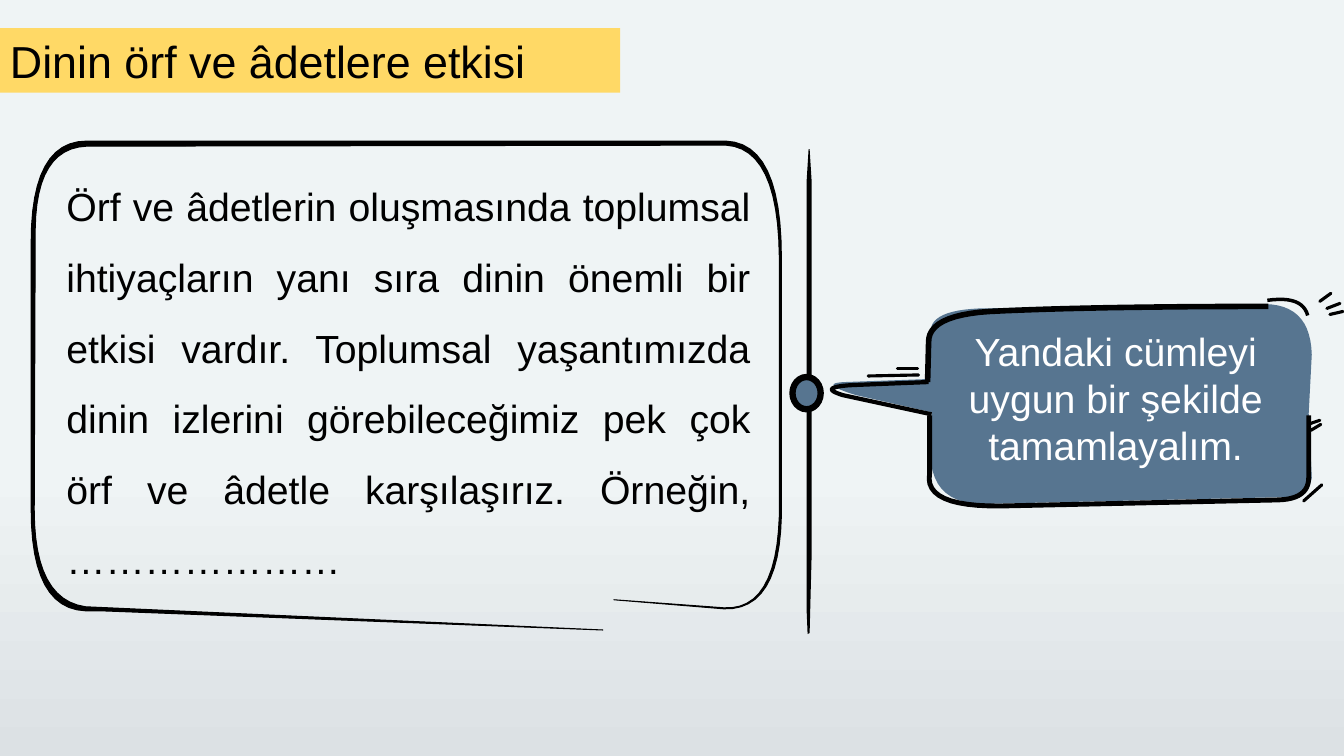
from lxml import etree
from pptx import Presentation
from pptx import util as u
from pptx.dml.color import RGBColor
from pptx.enum import shapes, text
from pptx.oxml import ns

THEME = {
    "font": "Arial", "title_size": 32, "body_size": 28,
    "ink": "000000", "paper": "FFFFFF", "banner": "FFD966", "bubble": "577590",
    "sky": ((0.62, "EFF4F5"), (1, "DCE1E4")),
}

TITLE = "Dinin örf ve âdetlere etkisi"
PASSAGE = (
    "Örf ve âdetlerin oluşmasında toplumsal ihtiyaçların yanı sıra dinin önemli bir "
    "etkisi vardır. Toplumsal yaşantımızda dinin izlerini görebileceğimiz pek çok "
    "örf ve âdetle karşılaşırız. Örneğin, …………………"
)
PROMPT = "Yandaki cümleyi uygun bir şekilde tamamlayalım."

# Each outline: a start point, then line ends (x, y) or curves (bend x, bend y, x, y).
FRAME = [
    (0.86, 1.4), (0.31, 1.4, 0.31, 2.4), (0.31, 5.06), (0.31, 6.04, 0.85, 6.06),
    (1.01, 6.06), (5.98, 6.25), (0.85, 6.02), (0.34, 5.95, 0.34, 5.06),
    (0.35, 2.27), (0.36, 1.47, 0.86, 1.45), (7.2, 1.44), (7.72, 1.47, 7.73, 2.55),
    (7.73, 5.12), (7.7, 6.06, 7.18, 6.03), (6.09, 5.95), (7.18, 6.04),
    (7.73, 6.06, 7.75, 5.12), (7.75, 2.55), (7.75, 1.42, 7.2, 1.4),
]
DIVIDER = [(8, 6.05), (8, 1.8), (8.02, 1.48), (8.03, 1.48), (8.05, 1.8),
           (8.05, 5.5), (8.03, 6.28), (8.01, 6.29)]
BUBBLE = [
    (13.01, 3.52), (12.98, 4.1), (13.01, 4.74), (12.98, 4.92, 12.8, 4.93),
    (9.72, 5), (9.2, 4.98, 9.23, 4.43), (9.24, 4.09), (8.49, 3.92),
    (8.1, 3.8, 8.39, 3.79), (9.22, 3.76), (9.23, 3.28), (9.24, 3.08, 9.71, 3.06),
    (12.61, 3.02), (13, 3.06, 13.01, 3.52),
]
BUBBLE_STROKES = [
    (3.5, [(12.98, 4.12), (12.98, 4.74), (12.98, 4.95, 12.68, 4.96), (9.93, 5.02),
           (9.16, 5.03, 9.22, 4.7), (9.22, 4.12)]),
    (3, [(9.24, 4.11), (8.36, 3.92), (8.1, 3.84, 8.46, 3.82), (9.21, 3.79)]),
    (4, [(9.2, 3.79), (9.21, 3.4), (9.2, 3.13, 9.81, 3.09), (10.8, 3.04, 12.58, 3.04)]),
    (2.5, [(12.57, 2.98), (12.92, 2.93, 12.97, 3.13)]),
]
TICKS = [
    (13.19, 3.12, 13.32, 3.09), (13.16, 3.06, 13.29, 3.01), (13.09, 2.99, 13.2, 2.91),
    (13, 4.27, 13.1, 4.21), (13, 4.2, 13.09, 4.17), (12.93, 4.97, 13.11, 4.81),
    (8.61, 3.73, 9.11, 3.72), (8.9, 3.66, 9.1, 3.66),
]
TICK_WIDTH = 2.25
CURVE_STEPS = 12


def color(name):
    return RGBColor.from_string(THEME.get(name, name))


def trace(outline):
    points = [outline[0]]
    for step in outline[1:]:
        if len(step) == 2:
            points.append(step)
            continue
        start, bend, end = points[-1], step[:2], step[2:]
        for i in range(1, CURVE_STEPS + 1):
            t = i / CURVE_STEPS
            points.append(tuple((1 - t) ** 2 * a + 2 * t * (1 - t) * b + t * t * c
                                for a, b, c in zip(start, bend, end)))
    return [(u.Inches(x), u.Inches(y)) for x, y in points]


def paint(part, fill=None, edge=None):
    part.shadow.inherit = False
    if fill:
        part.fill.solid()
        part.fill.fore_color.rgb = color(fill)
    else:
        part.fill.background()
    if edge:
        part.line.color.rgb = color("ink")
        part.line.width = u.Pt(edge)
    else:
        part.line.fill.background()


def draw(slide, outline, fill=None, edge=None):
    points = trace(outline)
    builder = slide.shapes.build_freeform(*points[0], scale=1.0)
    builder.add_line_segments(points[1:], close=bool(fill))
    paint(builder.convert_to_shape(), fill, edge)


def write(part, words, size, ink, align, spacing=None):
    frame = part.text_frame
    frame.text = words
    frame.word_wrap = True
    frame.auto_size = text.MSO_AUTO_SIZE.SHAPE_TO_FIT_TEXT
    line = frame.paragraphs[0]
    line.alignment = align
    line.line_spacing = spacing
    font = line.runs[0].font
    font.name, font.size, font.color.rgb = THEME["font"], u.Pt(THEME[size]), color(ink)
    return frame


def main():
    deck = Presentation()
    deck.slide_width, deck.slide_height = u.Inches(13.33), u.Inches(7.5)
    slide = deck.slides.add_slide(deck.slide_layouts[6])
    sky = slide.background.fill
    sky.gradient()
    sky.gradient_angle = 270
    for stop, (position, shade) in zip(sky.gradient_stops, THEME["sky"]):
        stop.position, stop.color.rgb = position, color(shade)

    draw(slide, FRAME, "ink", edge=0.75)
    passage = slide.shapes.add_textbox(*map(u.Inches, (0.56, 1.53, 6.98, 4.34)))
    write(passage, PASSAGE, "body_size", "ink", text.PP_ALIGN.JUSTIFY, 1.5)
    draw(slide, DIVIDER, "ink")
    draw(slide, BUBBLE, "bubble")
    for width, stroke in BUBBLE_STROKES:
        draw(slide, stroke, edge=width)
    for ends in TICKS:
        tick = slide.shapes.add_connector(shapes.MSO_CONNECTOR.STRAIGHT,
                                          *map(u.Inches, ends))
        tick.line.color.rgb = color("ink")
        tick.line.width = u.Pt(TICK_WIDTH)
        tick.line._get_or_add_ln().set("cap", "rnd")
        etree.SubElement(tick._element.spPr, ns.qn("a:effectLst"))
    knob = slide.shapes.add_shape(shapes.MSO_SHAPE.OVAL,
                                  *map(u.Inches, (7.86, 3.74, 0.28, 0.32)))
    paint(knob, "bubble", edge=4.5)

    prompt = slide.shapes.add_textbox(*map(u.Inches, (9.23, 3.25, 3.67, 1.41)))
    inside = write(prompt, PROMPT, "body_size", "paper", text.PP_ALIGN.CENTER)
    inside.margin_left = inside.margin_right = inside.margin_top = inside.margin_bottom = 0
    banner = slide.shapes.add_shape(shapes.MSO_SHAPE.RECTANGLE,
                                    *map(u.Inches, (0, 0.28, 6.15, 0.64)))
    paint(banner, "banner")
    write(banner, TITLE, "title_size", "ink", text.PP_ALIGN.LEFT)
    deck.save("out.pptx")


if __name__ == "__main__":
    main()
